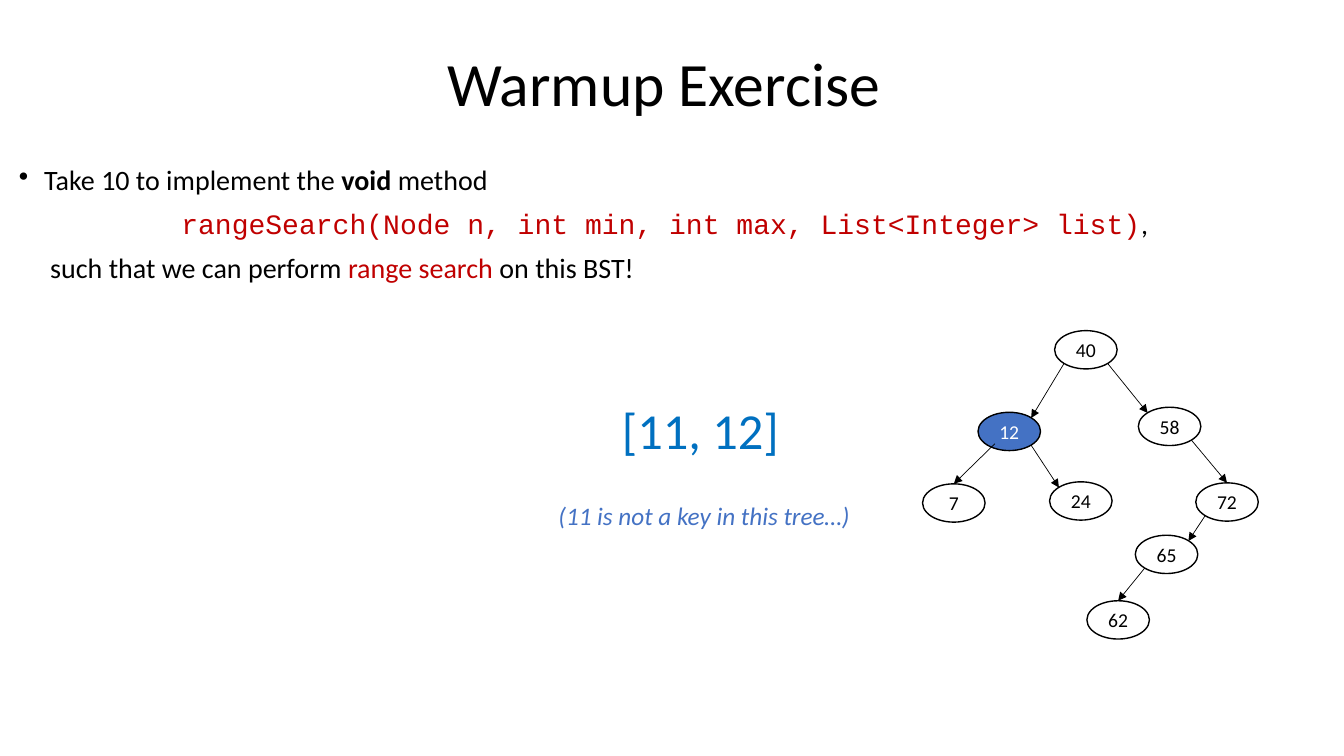
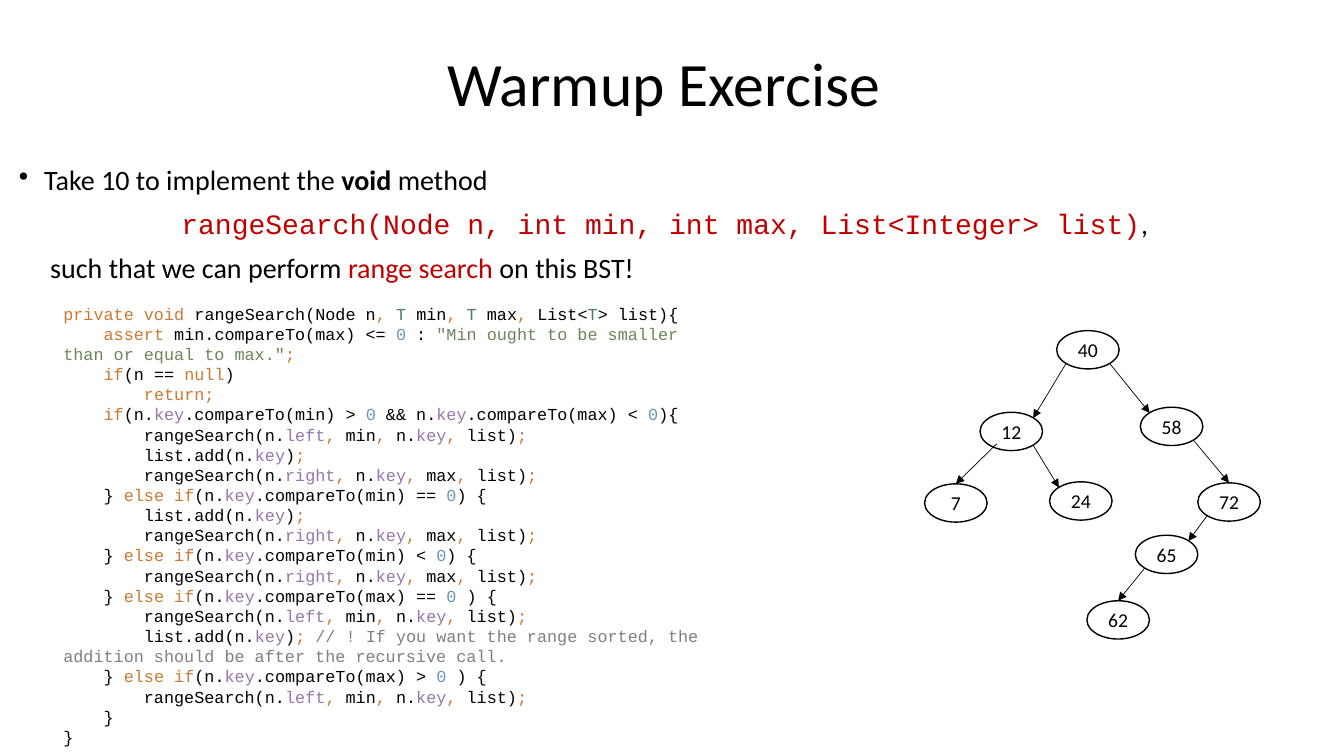
from lxml import etree
from pptx import Presentation
from pptx.dml.color import RGBColor
from pptx.enum import shapes, text
from pptx.oxml import ns
from pptx.util import Inches, Pt

BLACK = RGBColor(0x00, 0x00, 0x00)
WHITE = RGBColor(0xFF, 0xFF, 0xFF)
RED = RGBColor(0xC0, 0x00, 0x00)
BLUE = RGBColor(0x00, 0x70, 0xC0)
ACCENT = RGBColor(0x44, 0x72, 0xC4)
ORANGE = RGBColor(0xCC, 0x78, 0x32)
TEAL = RGBColor(0x50, 0x78, 0x74)
NUMBER = RGBColor(0x68, 0x97, 0xBB)
GREEN = RGBColor(0x6A, 0x87, 0x59)
PURPLE = RGBColor(0x98, 0x76, 0xAA)
GRAY = RGBColor(0x80, 0x80, 0x80)
BODY, MONO = "Calibri", "Courier New"

# Binary search tree: top-left corner of each node, then the edges
NODE_W, NODE_H = 0.62, 0.38
NODES = {40: (10.46, 3.28), 12: (9.7, 4.09), 24: (10.41, 4.78), 58: (11.29, 4.04),
         7: (9.15, 4.8), 72: (11.86, 4.79), 65: (11.26, 5.31), 62: (10.78, 5.96)}
TOP, TOP_LEFT, TOP_RIGHT = (0.5, 0), (0.15, 0.15), (0.85, 0.15)
BOTTOM_LEFT, BOTTOM_RIGHT, INNER_LEFT = (0.15, 0.86), (0.85, 0.86), (0.27, 0.82)
EDGES = [(40, BOTTOM_LEFT, 12, TOP_RIGHT), (12, INNER_LEFT, 7, TOP),
         (12, BOTTOM_RIGHT, 24, TOP_LEFT), (40, BOTTOM_RIGHT, 58, TOP_LEFT),
         (58, BOTTOM_RIGHT, 72, TOP), (72, BOTTOM_LEFT, 65, TOP_RIGHT),
         (65, BOTTOM_LEFT, 62, TOP)]
SHIFTED = {40, 12, 58, 7, 72}

# Code listing: "|" separates runs, the colour follows from the token
TOKENS = {"T": TEAL, "0": NUMBER}
TOKENS.update(dict.fromkeys(["key", "left", "right"], PURPLE))
TOKENS.update(dict.fromkeys(
    ["private void", "assert", "if", "else if", "null", "return;", ",", ";"], ORANGE))
GO_LEFT = "        rangeSearch(n.|left|, |min|, |n.|key|, |list)|;"
GO_RIGHT = "        rangeSearch(n.|right|, |n.|key|, |max|, |list)|;"
ADD_KEY = "        list.add(n.|key|)|;"
CODE = [
    "private void |rangeSearch(Node n|, |T |min|, |T |max|, |List<|T|> list){",
    '    |assert |min.compareTo(max) <= |0 |: |'
    '"Min ought to be smaller than or equal to max."|;',
    "    |if|(n == |null|)",
    "        |return;",
    "    |if|(n.|key|.compareTo(min) > |0 |&& n.|key|.compareTo(max) < |0|){",
    GO_LEFT, ADD_KEY, GO_RIGHT,
    "    } |else if|(n.|key|.compareTo(min) == |0|) {",
    ADD_KEY, GO_RIGHT,
    "    } |else if|(n.|key|.compareTo(min) < |0|) {",
    GO_RIGHT,
    "    } |else if|(n.|key|.compareTo(max) == |0 |) {",
    GO_LEFT,
    ADD_KEY + " |// ! If you want the range sorted, the addition should be"
    " after the recursive call.",
    "    } |else if|(n.|key|.compareTo(max) > |0 |) {",
    GO_LEFT,
    "    }",
    "}",
]


def add_run(p, words, size, color=BLACK, font=BODY, bold=False, italic=False):
    r = p.add_run()
    r.text = words
    r.font.size, r.font.name = Pt(size), font
    r.font.bold, r.font.italic = bold, italic
    r.font.color.rgb = color


def add_box(s, x, y, w, h):
    tf = s.shapes.add_textbox(Inches(x), Inches(y), Inches(w), Inches(h)).text_frame
    tf.word_wrap = True
    return tf


prs = Presentation()
prs.slide_width, prs.slide_height = Inches(13.33), Inches(7.5)

# Shared parts: title, task and tree
for highlight, shift in [(12, 0), (None, 0.02)]:
    s = prs.slides.add_slide(prs.slide_layouts[5])
    title = s.shapes.title
    title.left, title.top = Inches(1.11), Inches(0.25)
    title.width, title.height = Inches(10.95), Inches(1.22)
    title.text_frame.vertical_anchor = text.MSO_ANCHOR.MIDDLE
    p = title.text_frame.paragraphs[0]
    p.alignment, p.line_spacing = text.PP_ALIGN.CENTER, 0.9
    add_run(p, "Warmup Exercise", 44)

    # Task
    tf = add_box(s, 0.09, 1.6, 13.07, 1.35)
    p = tf.paragraphs[0]
    pPr = p._p.get_or_add_pPr()
    pPr.set("marL", str(Inches(0.25)))
    pPr.set("indent", str(-Inches(0.25)))
    etree.SubElement(pPr, ns.qn("a:buChar")).set("char", "•")
    add_run(p, "Take 10 to implement the ", 20)
    add_run(p, "void ", 20, bold=True)
    add_run(p, "method", 20)
    p = tf.add_paragraph()
    p.alignment, p.space_before = text.PP_ALIGN.CENTER, Pt(10)
    add_run(p, "rangeSearch(Node n, int min, int max, List<Integer> list)", 20, RED, MONO)
    add_run(p, ", ", 20)
    p = tf.add_paragraph()
    p._p.get_or_add_pPr().set("marL", str(Inches(0.31)))
    p.space_before = Pt(10)
    add_run(p, "such that we can perform ", 20)
    add_run(p, "range search ", 20, RED)
    add_run(p, "on this BST!", 20)
    for p in tf.paragraphs:
        p.line_spacing = 0.9

    # Tree nodes
    nodes = {key: (x + shift * (key in SHIFTED), y) for key, (x, y) in NODES.items()}
    for key, (x, y) in nodes.items():
        sp = s.shapes.add_shape(shapes.MSO_SHAPE.OVAL, Inches(x), Inches(y),
                                Inches(NODE_W), Inches(NODE_H))
        sp.shadow.inherit = False
        sp.line.color.rgb, sp.line.width = BLACK, Pt(1)
        if key == highlight:
            sp.fill.solid()
            sp.fill.fore_color.rgb = ACCENT
        else:
            sp.fill.background()
        tf = sp.text_frame
        tf.margin_left = tf.margin_right = tf.margin_top = tf.margin_bottom = 0
        tf.word_wrap = False
        tf.vertical_anchor = text.MSO_ANCHOR.MIDDLE
        p = tf.paragraphs[0]
        p.alignment = text.PP_ALIGN.CENTER
        add_run(p, str(key), 14, WHITE if key == highlight else BLACK)

    # Tree edges
    for parent, start, child, end in EDGES:
        ends = []
        for key, (fx, fy) in [(parent, start), (child, end)]:
            x, y = nodes[key]
            ends += [Inches(x + fx * NODE_W), Inches(y + fy * NODE_H)]
        cx = s.shapes.add_connector(shapes.MSO_CONNECTOR.STRAIGHT, *ends)
        cx.line.color.rgb, cx.line.width = BLACK, Pt(0.5)
        etree.SubElement(cx.line._get_or_add_ln(), ns.qn("a:tailEnd")).set("type", "triangle")
        etree.SubElement(cx._element.spPr, ns.qn("a:effectLst"))

# Slide 1: the range to search
s = prs.slides[0]
add_run(add_box(s, 6.07, 3.91, 2.91, 0.71).paragraphs[0], "[11, 12]", 36, BLUE)
add_run(add_box(s, 5.44, 4.91, 3.37, 0.4).paragraphs[0],
        "(11 is not a key in this tree…)", 18, ACCENT, italic=True)

# Slide 2: the solution
tf = add_box(prs.slides[1], 0.53, 2.96, 6.67, 4.54)
for i, line in enumerate(CODE):
    p = tf.add_paragraph() if i else tf.paragraphs[0]
    p.line_spacing = Pt(14.4)
    for token in line.split("|"):
        color = TOKENS.get(token.strip(), BLACK)
        if token.startswith('"'):
            color = GREEN
        elif token.startswith("//"):
            color = GRAY
        add_run(p, token, 12, color, MONO)

prs.save("out.pptx")
